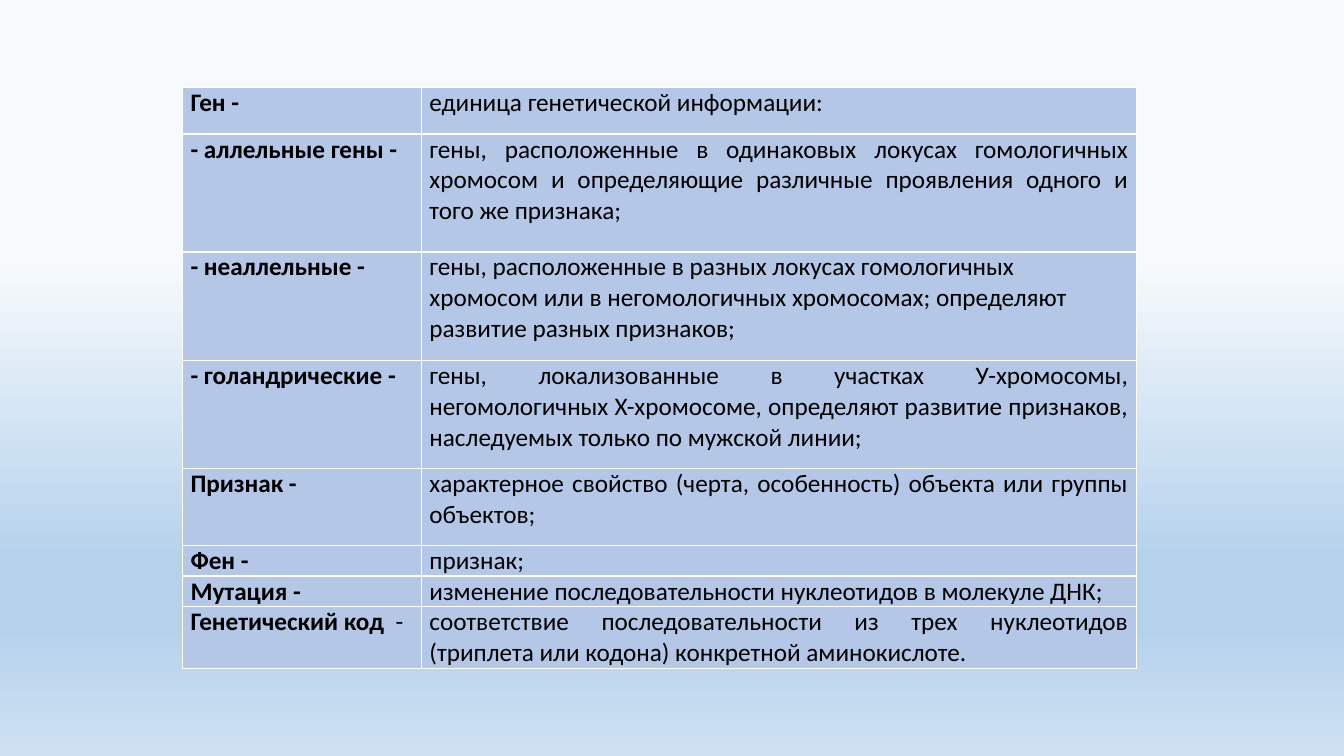
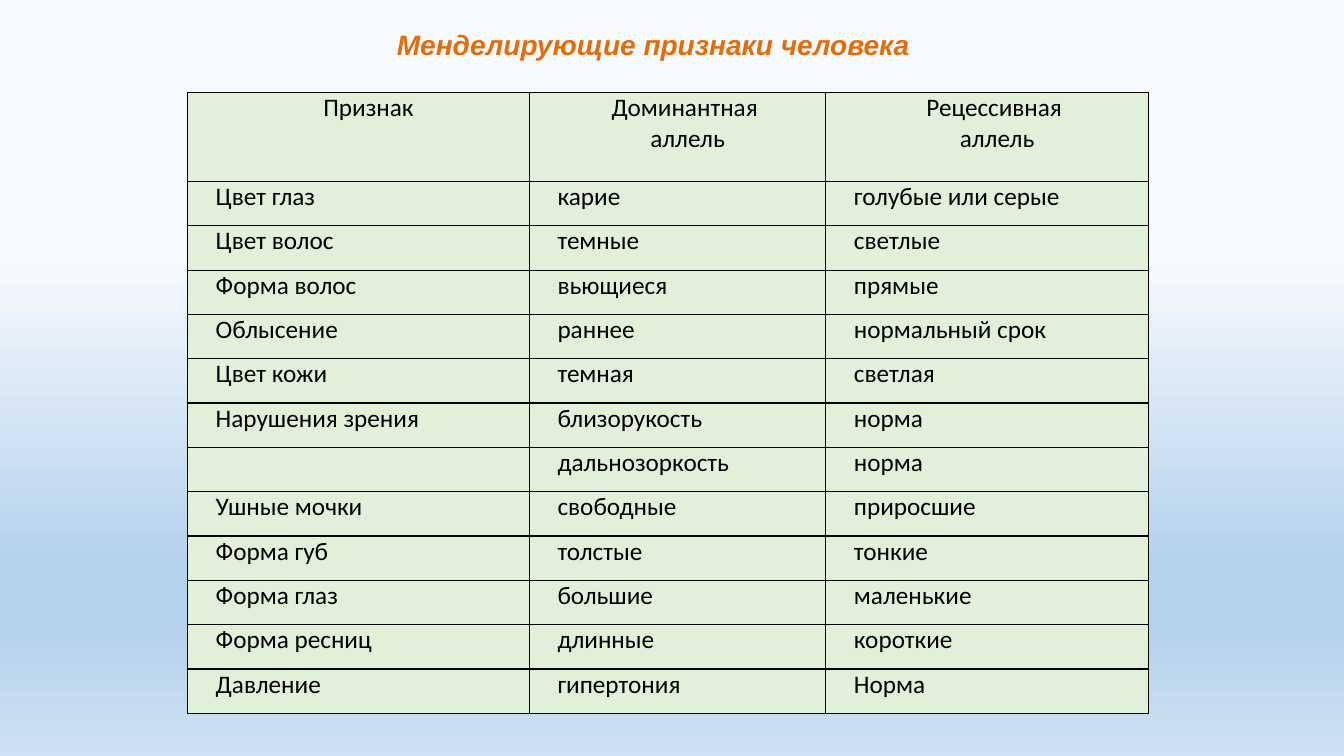
from lxml.etree import SubElement
from pptx import Presentation
from pptx.dml.color import RGBColor
from pptx.enum.text import MSO_ANCHOR, PP_ALIGN
from pptx.oxml.ns import qn
from pptx.util import Inches, Pt

SLIDE_W, SLIDE_H = 13.33, 7.5
SKY_STOPS = [(34, "F7FAFD"), (74, "B5D2EC"), (83, "B5D2EC"), (100, "CEE1F2")]
BLACK, WHITE, ORANGE = "000000", "FFFFFF", "E46C0A"
BLUE, GREEN = "B4C7E7", "E2F0D9"
LEFT, CENTER, JUSTIFY = PP_ALIGN.LEFT, PP_ALIGN.CENTER, PP_ALIGN.JUSTIFY

# term, tail of the term that is not bold, definition, alignment, row height
TERMS = [
    ("Ген -", "", "единица генетической информации:", JUSTIFY, 0.46),
    ("- аллельные гены -", "",
     "гены, расположенные в одинаковых локусах гомологичных хромосом и "
     "определяющие различные проявления одного и того же признака;", JUSTIFY, 1.17),
    ("- неаллельные -", "",
     "гены, расположенные в разных локусах гомологичных хромосом или в "
     "негомологичных хромосомах; определяют развитие разных признаков;", LEFT, 1.08),
    ("- голандрические -", "",
     "гены, локализованные в участках У-хромосомы, негомологичных X-хромосоме, "
     "определяют развитие признаков, наследуемых только по мужской линии;", JUSTIFY, 1.07),
    ("Признак -", "",
     "характерное свойство (черта, особенность) объекта или группы объектов;", JUSTIFY, 0.76),
    ("Фен -", "", "признак;", JUSTIFY, 0.3),
    ("Мутация -", "", "изменение последовательности нуклеотидов в молекуле ДНК;", JUSTIFY, 0.3),
    ("Генетический код", "  -",
     "соответствие последовательности из трех нуклеотидов (триплета или кодона) "
     "конкретной аминокислоте. ", JUSTIFY, 0.61),
]

TRAITS_TITLE = "Менделирующие признаки человека"
TRAITS = [
    ("Признак", "Доминантная \nаллель", "Рецессивная \nаллель"),
    ("Цвет глаз", "карие", "голубые или серые"),
    ("Цвет волос", "темные ", "светлые"),
    ("Форма волос", "вьющиеся", "прямые"),
    ("Облысение", "раннее", "нормальный срок"),
    ("Цвет кожи", "темная", "светлая"),
    ("Нарушения зрения", "близорукость", "норма"),
    ("", "дальнозоркость", "норма"),
    ("Ушные мочки", "свободные", "приросшие"),
    ("Форма губ", "толстые", "тонкие"),
    ("Форма глаз", "большие", "маленькие"),
    ("Форма ресниц", "длинные", "короткие"),
    ("Давление", "гипертония", "Норма"),
]
TRAIT_ROW = 0.44


def rgb(color):
    return RGBColor.from_string(color)


def add_solid(parent, color):
    SubElement(SubElement(parent, qn("a:solidFill")), qn("a:srgbClr"), val=color)


def paint_background(master):
    fill = master.background.fill
    fill.gradient()
    fill.gradient_angle = 270
    stops = master.element.find(".//" + qn("a:gsLst"))
    for stop in list(stops):
        stops.remove(stop)
    for percent, color in SKY_STOPS:
        stop = SubElement(stops, qn("a:gs"), pos=str(percent * 1000))
        SubElement(stop, qn("a:srgbClr"), val=color)


def format_run(r, font="Calibri", size=18, color=BLACK, bold=False, italic=False):
    r.font.name, r.font.size = font, Pt(size)
    r.font.bold, r.font.italic = bold, italic
    r.font.color.rgb = rgb(color)


def add_grid(slide, left, top, cols, rows, fill, line):
    """Add a table of empty cells with one fill and one border colour."""
    frame = slide.shapes.add_table(len(rows), len(cols), Inches(left), Inches(top),
                                   Inches(sum(cols)), Inches(sum(rows)))
    table = frame.table
    table.first_row = table.horz_banding = False
    for col, width in zip(table.columns, cols):
        col.width = Inches(width)
    for row, height in zip(table.rows, rows):
        row.height = Inches(height)
    for cell in table.iter_cells():
        cell.margin_left = cell.margin_right = Inches(0.08)
        cell.margin_top = cell.margin_bottom = 0
        props = cell._tc.get_or_add_tcPr()
        for side in ("a:lnL", "a:lnR", "a:lnT", "a:lnB"):
            add_solid(SubElement(props, qn(side), w=str(Pt(1))), line)
        cell.fill.solid()
        cell.fill.fore_color.rgb = rgb(fill)
    return table


def write_cell(cell, text, align, bold=False, indent=0):
    cell.text_frame.text = text
    for p in cell.text_frame.paragraphs:
        p.alignment = align
        if indent:
            p._p.get_or_add_pPr().set("marL", str(Inches(indent)))
        for r in p.runs:
            format_run(r, bold=bold)


def build_terms(slide):
    table = add_grid(slide, 1.81, 0.87, [2.37, 7.09], [t[-1] for t in TERMS], BLUE, WHITE)
    for row, (term, tail, definition, align, _) in enumerate(TERMS):
        label = table.cell(row, 0)
        write_cell(label, term, LEFT, bold=True)
        if tail:
            r = label.text_frame.paragraphs[0].add_run()
            r.text = tail
            format_run(r)
        write_cell(table.cell(row, 1), definition, align)


def build_traits(slide):
    rows = [2 * TRAIT_ROW] + [TRAIT_ROW] * (len(TRAITS) - 1)
    table = add_grid(slide, 1.86, 0.92, [3.39, 2.94, 3.2], rows, GREEN, BLACK)
    for row, texts in enumerate(TRAITS):
        for col, text in enumerate(texts):
            write_cell(table.cell(row, col), text, JUSTIFY if row else CENTER, indent=0.2)

    box = slide.shapes.add_textbox(Inches(3.81), Inches(0.22), Inches(5.34), Inches(0.44))
    tf = box.text_frame
    tf.word_wrap = False
    tf.vertical_anchor = MSO_ANCHOR.MIDDLE
    tf.text = TRAITS_TITLE
    p = tf.paragraphs[0]
    p.alignment = CENTER
    format_run(p.runs[0], "Arial", 20, ORANGE, bold=True, italic=True)


def main():
    prs = Presentation()
    prs.slide_width, prs.slide_height = Inches(SLIDE_W), Inches(SLIDE_H)
    paint_background(prs.slide_master)
    for build in (build_terms, build_traits):
        build(prs.slides.add_slide(prs.slide_layouts[6]))
    prs.save("out.pptx")


if __name__ == "__main__":
    main()
